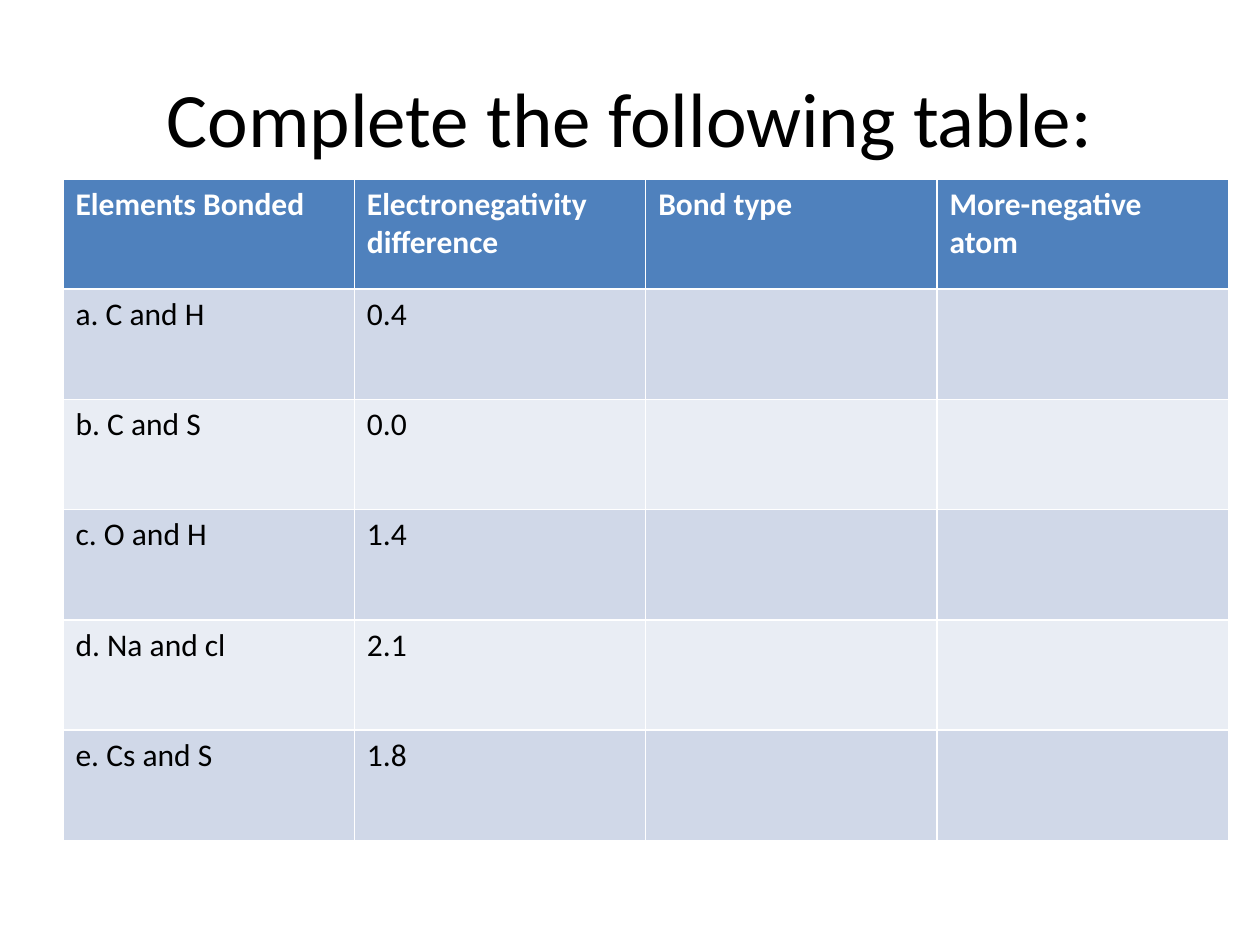
from pptx import Presentation
from pptx.dml.color import RGBColor
from pptx.enum.text import MSO_ANCHOR, PP_ALIGN
from pptx.util import Inches, Pt

MIDDLE = MSO_ANCHOR.MIDDLE
CENTER = PP_ALIGN.CENTER
FONT = "Calibri"
HEADER, BANDS = "4F81BD", ("E9EDF4", "D0D8E8")


def rgb(value):
    return RGBColor.from_string(value)


def style(p, size, color, bold=False):
    p.font.name = FONT
    p.font.size = Pt(size)
    p.font.bold = bold
    p.font.color.rgb = rgb(color)


prs = Presentation()
prs.slide_width, prs.slide_height = Inches(10), Inches(7.5)
W, H = prs.slide_width, prs.slide_height
s = prs.slides.add_slide(prs.slide_layouts[6])

title = s.shapes.add_textbox(int(W * 0.05), int(H * 0.04), int(W * 0.9), Inches(1.25))
tf = title.text_frame
tf.word_wrap = True
tf.vertical_anchor = MIDDLE
p = tf.paragraphs[0]
p.text = "Complete the following table:"
p.alignment = CENTER
style(p, 44, "000000")

rows = [
    ("Elements Bonded", "Electronegativity difference", "Bond type", "More-negative atom"),
    ("a. C and H", "0.4", "", ""),
    ("b. C and S", "0.0", "", ""),
    ("c. O and H", "1.4", "", ""),
    ("d. Na and cl", "2.1", "", ""),
    ("e. Cs and S", "1.8", "", ""),
]
table = s.shapes.add_table(
    len(rows), len(rows[0]), int(W * 0.05), Inches(1.42), Inches(9.25), Inches(5.25)
).table

for i, row in enumerate(rows):
    is_header = i == 0
    for j, text in enumerate(row):
        cell = table.cell(i, j)
        cell.fill.solid()
        cell.fill.fore_color.rgb = rgb(HEADER if is_header else BANDS[i % 2])
        p = cell.text_frame.paragraphs[0]
        p.text = text
        style(p, 18, "FFFFFF" if is_header else "000000", is_header)

prs.save("out.pptx")
